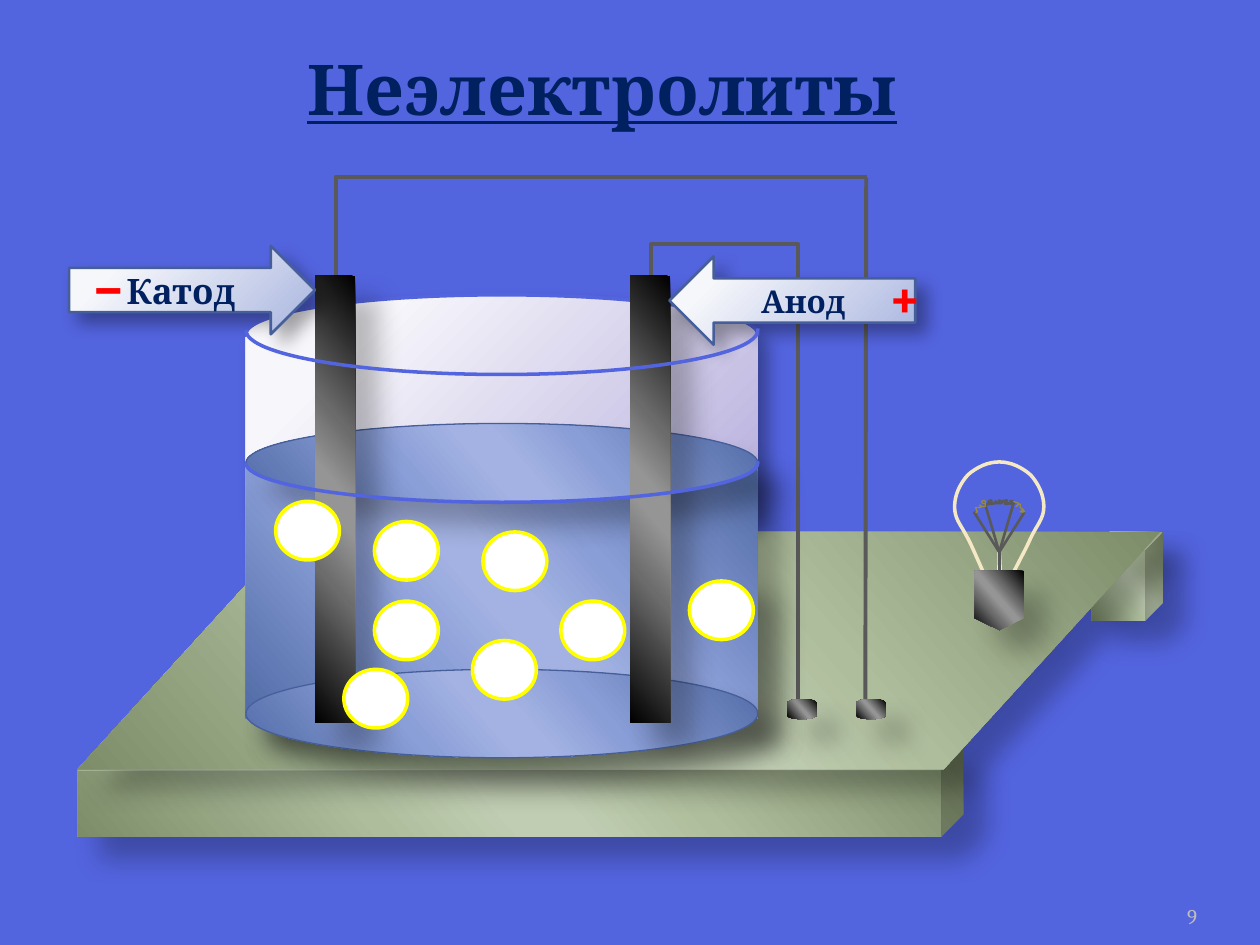
import lxml.etree
import pptx
import pptx.dml.color
import pptx.enum.shapes
import pptx.enum.text
import pptx.oxml.ns
import pptx.util

Pt = pptx.util.Pt
Kind = pptx.enum.shapes.MSO_SHAPE
Join = pptx.enum.shapes.MSO_CONNECTOR
Side = pptx.enum.text.PP_ALIGN
Hold = pptx.enum.text.MSO_ANCHOR
qn = pptx.oxml.ns.qn


class Theme:
    font = "Cambria"
    back, ink, sign, gold, note = "5364DF", "002060", "FF0000", "FFFF00", "BDBDBD"
    wire, rim, bulb, coil, ball = "595959", "465F9A", "F4E8C5", "998946", "FFFFFF"
    # Gradients: a list of stops, in percent
    spots = (0, 33, 47, 53, 68, 100)
    wood = list(zip(spots, "7D8D6A AEBD9C C0CDB2 C0CDB2 AEBE9D 7D8D6A".split()))
    metal = list(zip(spots, "000000 6B6B6B 959595 959595 6C6C6C 000000".split()))
    water = list(zip(spots, "516BA6 899DD6 A3B2E2 A3B2E2 8A9ED7 516BA6".split()))
    glass = [(20, "F7F6FB"), (100, "B2AADB")]
    arrow = [(20, "F6F7FB"), (100, "A8B5DF")]
    title, minus, plus, left, right, page = 40, 60, 32, 20, 18, 12


def paint(item, fill=None, edge=None, width=0):
    """Set fill, outline and shadow; a list of stops makes a gradient with a shadow."""
    props = item._element.spPr
    rgb = pptx.dml.color.RGBColor.from_string
    if isinstance(fill, str):
        item.fill.solid()
        item.fill.fore_color.rgb = rgb(fill)
    elif hasattr(item, "fill"):
        item.fill.background()
    if edge:
        item.line.color.rgb = rgb(edge)
        item.line.width = Pt(width)
    else:
        item.line.fill.background()
    cast = lxml.etree.SubElement(props, qn("a:effectLst"))
    if not isinstance(fill, list):
        return
    grad = lxml.etree.Element(qn("a:gradFill"), rotWithShape="1")
    stops = lxml.etree.SubElement(grad, qn("a:gsLst"))
    for spot, hue in fill:
        stop = lxml.etree.SubElement(stops, qn("a:gs"), pos=str(spot * 1000))
        lxml.etree.SubElement(stop, qn("a:srgbClr"), val=hue)
    if len(fill) == 2:
        way = lxml.etree.SubElement(grad, qn("a:path"), path="circle")
        lxml.etree.SubElement(way, qn("a:fillToRect"), l="-15000", t="-15000",
                              r="115000", b="115000")
        blur, dist, dark = 10.2, 8, 35
    else:
        lxml.etree.SubElement(grad, qn("a:lin"), ang=str(139 * 60000), scaled="0")
        blur, dist, dark = 15, 18, 26
    props.replace(props.find(qn("a:noFill")), grad)
    drop = lxml.etree.SubElement(cast, qn("a:outerShdw"), blurRad=str(Pt(blur)),
                                 dist=str(Pt(dist)), dir=str(45 * 60000),
                                 algn="ctr", rotWithShape="0")
    tone = lxml.etree.SubElement(drop, qn("a:srgbClr"), val="000000")
    lxml.etree.SubElement(tone, qn("a:alpha"), val=str(dark * 1000))


def write(item, text, size, hue, bold=False, side=Side.CENTER, hold=Hold.MIDDLE):
    """Add one run to the first paragraph of an item."""
    frame = item.text_frame
    frame.word_wrap = True
    frame.vertical_anchor = hold
    line = frame.paragraphs[0]
    line.alignment = side
    run = line.add_run()
    run.text = text
    run.font.name, run.font.size, run.font.bold = Theme.font, Pt(size), bold
    run.font.color.rgb = pptx.dml.color.RGBColor.from_string(hue)
    return run


deck = pptx.Presentation()
deck.slide_width, deck.slide_height = Pt(720), Pt(540)
slide = deck.slides.add_slide(deck.slide_layouts[5])
shapes = slide.shapes
slide.background.fill.solid()
slide.background.fill.fore_color.rgb = pptx.dml.color.RGBColor.from_string(Theme.back)

# Title
title = shapes.title
title.left, title.top, title.width, title.height = map(Pt, (140.5, 22.5, 416, 55.5))
title.text_frame.auto_size = pptx.enum.text.MSO_AUTO_SIZE.SHAPE_TO_FIT_TEXT
write(title, "Неэлектролиты", Theme.title, Theme.ink, True, hold=Hold.TOP).font.underline = True
write(title, " ", Theme.title, Theme.gold, True, hold=Hold.TOP)

# Board, glass and terminals
left, wide = 140.5, 292.5
for kind, box, fill in (
    (Kind.CUBE, (624, 304, 40.5, 50.5), Theme.wood),
    (Kind.CUBE, (44.5, 427.5, 506, 50.5), Theme.wood),
    (Kind.FLOWCHART_DATA, (44.5, 304, 618.5, 135.5), Theme.wood),
    (Kind.FLOWCHART_MAGNETIC_DISK, (left, 168.5, wide, 146.5), Theme.glass),
    (Kind.FLOWCHART_MAGNETIC_DISK, (450, 399.5, 16.5, 11.5), Theme.metal),
    (Kind.FLOWCHART_MAGNETIC_DISK, (489.5, 399.5, 16.5, 11.5), Theme.metal),
):
    paint(shapes.add_shape(kind, *map(Pt, box)), fill)

# Wires: two bent ones from the electrodes, one straight
for form, box, turn, flips, bend in (
    ("bentConnector2", (315.5, -22.5, 56, 303.5), 90, ("flipH", "flipV"), None),
    ("bentConnector3", (293, 236.5, 242, 84), 270, ("flipH",), -7400),
):
    x, y, w, h = box
    wire = shapes.add_connector(Join.ELBOW, Pt(x), Pt(y), Pt(x + w), Pt(y + h))
    frame = wire._element.spPr.find(qn("a:xfrm"))
    frame.set("rot", str(turn * 60000))
    for flip in flips:
        frame.set(flip, "1")
    geom = wire._element.spPr.find(qn("a:prstGeom"))
    geom.set("prst", form)
    if bend:
        lxml.etree.SubElement(geom.find(qn("a:avLst")), qn("a:gd"),
                              name="adj1", fmla=f"val {bend}")
    paint(wire, edge=Theme.wire, width=2.25)
wire = shapes.add_connector(Join.STRAIGHT, Pt(495), Pt(101.5), Pt(494.5), Pt(399.5))
paint(wire, edge=Theme.wire, width=2.25)

# Water, electrodes and rims; an arc is given by its flip
for kind, box, fill, edge, flip in (
    (Kind.FLOWCHART_MAGNETIC_DISK, (left, 315, wide, 112.5), Theme.water, None, None),
    (Kind.RECTANGLE, (left, 264, wide, 146.5), Theme.water, None, None),
    (Kind.OVAL, (left, 242, wide, 45), Theme.water, Theme.rim, None),
    (Kind.OVAL, (left, 382.5, wide, 50.5), Theme.water, Theme.rim, None),
    (Kind.ARC, (left, 168.5, wide, 45), None, Theme.back, "1"),
    (Kind.RECTANGLE, (360, 157.5, 23, 255.5), Theme.metal, None, None),
    (Kind.RECTANGLE, (180, 157.5, 23, 255.5), Theme.metal, None, None),
    (Kind.ARC, (left, 242, wide, 45), None, Theme.back, "0"),
):
    part = shapes.add_shape(kind, *map(Pt, box))
    paint(part, fill, edge, 2 if flip else 0.75)
    if flip:
        part.rotation = 180
        part.adjustments[0], part.adjustments[1] = 107.75, 0
        part._element.spPr.find(qn("a:xfrm")).set("flipV", flip)

# Labelled arrows and signs
for kind, x, y, text, size in (
    (Kind.LEFT_ARROW, 382.5, 146.5, "Анод", Theme.right),
    (Kind.RIGHT_ARROW, 39.5, 140.5, "Катод", Theme.left),
):
    arrow = shapes.add_shape(kind, Pt(x), Pt(y), Pt(140.5), Pt(50.5))
    paint(arrow, Theme.arrow, Theme.rim, 1.5)
    write(arrow, text, size, Theme.ink, True)
for x, y, text, size, bold in ((45, 146.5, "-", Theme.minus, False),
                               (500.5, 157.5, "+", Theme.plus, True)):
    sign = shapes.add_textbox(Pt(x), Pt(y), Pt(22.5), Pt(22.5))
    write(sign, text, size, Theme.sign, bold)

# Front rim of the glass
rim = shapes.add_shape(Kind.ARC, Pt(left), Pt(163.5), Pt(wide), Pt(50.5))
rim.rotation = 180
rim.adjustments[0], rim.adjustments[1] = 107.75, 0
paint(rim, edge=Theme.back, width=2)

# Bulb: cubic curves as (control, control, end), drawn in short steps
start = (545.5, 289.5)
curves = (
    ((545.5, 283), (548.5, 276.5), (553, 271.5)),
    ((558, 267), (564.5, 264), (571, 264)),
    ((577.5, 264), (584, 267), (589, 271.5)),
    ((593.5, 276.5), (596.5, 283), (596.5, 289.5)),
    ((596.5, 296.5), (592.5, 300), (589, 307.5)),
    ((585.5, 315.5), (578, 328.5), (575.5, 335)),
    ((571.5, 341.5), (571.5, 349), (571, 345.5)),
    ((570.5, 342.5), (571, 315.5), (571, 315.5)),
    ((571, 314.5), (573, 343.5), (570, 342.5)),
    ((567.5, 341.5), (557.5, 316), (553, 307.5)),
    ((548.5, 299), (545.5, 296.5), start),
)
dots, last, steps = [], start, 8
for one, two, end in curves:
    for t in (n / steps for n in range(1, steps + 1)):
        dots.append([100 * ((1 - t) ** 3 * a + 3 * (1 - t) ** 2 * t * b
                            + 3 * (1 - t) * t ** 2 * c + t ** 3 * d)
                     for a, b, c, d in zip(last, one, two, end)])
    last = end
pen = shapes.build_freeform(start[0] * 100, start[1] * 100, Pt(0.01))
pen.add_line_segments(dots, close=True)
paint(pen.convert_to_shape(), edge=Theme.bulb, width=2)
base = shapes.add_shape(Kind.FLOWCHART_OFFPAGE_CONNECTOR, Pt(557), Pt(326), Pt(28), Pt(34))
paint(base, Theme.metal)

# Filament: holders, stem and coils
lamp = shapes.add_group_shape().shapes
for x, y in ((562.5, 286.5), (579.5, 286.5), (556.5, 292.5), (585.5, 292.5), (571, 326)):
    rod = lamp.add_connector(Join.STRAIGHT, Pt(571), Pt(315.5), Pt(x), Pt(y))
    paint(rod, edge=Theme.wire, width=1.5)
rod.end_connect(base, 0)
for hue, width, turns in (
    (Theme.wire, 1.5, ((563, 288.5), (565, 288), (566.5, 287.5), (566.5, 286), (565, 286.5),
                       (565, 287.5), (566, 288), (569.5, 287.5), (569, 286.5), (569, 287.5),
                       (572.5, 287.5), (571, 286), (571, 286.5), (575.5, 286.5), (575.5, 286),
                       (574.5, 286), (574.5, 288), (579, 287.5), (579, 286.5), (577.5, 286.5),
                       (578, 288), (579, 288))),
    (Theme.coil, 0.75, ((584.5, 293), (584, 291.5), (583, 292.5), (585.5, 292.5), (584.5, 291),
                        (583, 290), (583, 288), (582.5, 288), (580.5, 289.5), (581, 289.5),
                        (582, 287.5), (579, 286.5))),
    (Theme.coil, 0.75, ((557.5, 293), (558.5, 292.5), (557.5, 290), (560, 290), (561, 289.5),
                        (560, 288.5), (560, 289.5), (563, 289.5), (563, 286.5), (562.5, 286),
                        (561, 286.5), (561.5, 287.5), (563, 288))),
):
    scaled = [(x * 100, y * 100) for x, y in turns]
    pen = lamp.build_freeform(*scaled[0], Pt(0.01))
    pen.add_line_segments(scaled[1:], close=False)
    paint(pen.convert_to_shape(), edge=hue, width=width)

# Page number
page = shapes.add_textbox(Pt(624), Pt(505.5), Pt(60), Pt(29))
page.text_frame.margin_left = page.text_frame.margin_right = 0
write(page, "9", Theme.page, Theme.note, side=Side.RIGHT, hold=Hold.BOTTOM)

# Molecules
for x, y in ((320.5, 343.5), (214, 298), (276, 304), (394, 332),
             (214, 343.5), (270, 366), (196.5, 382.5), (157.5, 286.5)):
    ball = shapes.add_shape(Kind.FLOWCHART_CONNECTOR, Pt(x), Pt(y), Pt(36.5), Pt(33.5))
    paint(ball, Theme.ball, Theme.gold, 2)

deck.save("out.pptx")
